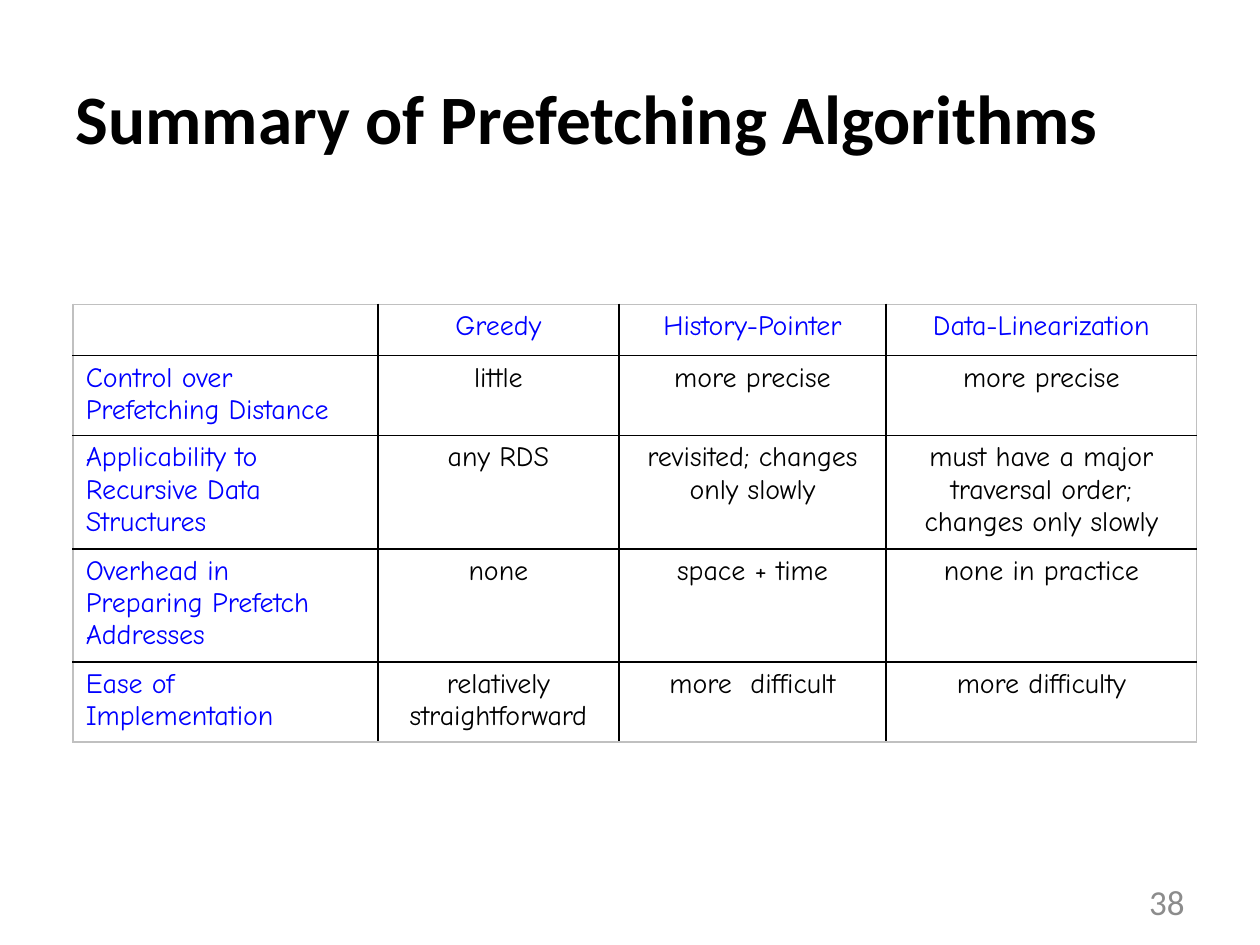
from lxml.etree import SubElement
from pptx import Presentation
from pptx.dml.color import RGBColor
from pptx.enum.text import MSO_ANCHOR as Anchor, PP_ALIGN as Align
from pptx.oxml.ns import qn
from pptx.util import Pt

HUES = {"black": "000000", "blue": "0000FF", "grey": "8C8C8C", "edge": "C0C0C0"}


def write(frame, text, font="Comic Neue", size=16, hue="black", bold=False,
          align=Align.LEFT, anchor=Anchor.TOP):
    frame.word_wrap = True
    frame.vertical_anchor = anchor
    frame.text = text
    for para in frame.paragraphs:
        para.alignment = align
        para.font.name = font
        para.font.size = Pt(size)
        para.font.bold = bold
        para.font.color.rgb = RGBColor.from_string(HUES[hue])


def rule(cell, side, hue):
    """Draw a 1 pt border on one side (L, R, T or B) of a cell."""
    line = SubElement(cell._tc.get_or_add_tcPr(), qn(f"a:ln{side}"), w=str(Pt(1)))
    fill = SubElement(line, qn("a:solidFill"))
    SubElement(fill, qn("a:srgbClr"), val=HUES[hue])


deck = Presentation()
deck.slide_width, deck.slide_height = Pt(720), Pt(540)
slide = deck.slides.add_slide(deck.slide_layouts[5])

title = slide.shapes.title
title.left, title.top, title.width, title.height = Pt(36), Pt(21.6), Pt(648), Pt(90)
write(title.text_frame, "Summary of Prefetching Algorithms", font="Calibri",
      size=39.6, bold=True, anchor=Anchor.MIDDLE)

number = slide.shapes.add_textbox(Pt(516), Pt(500.5), Pt(168), Pt(28.75))
write(number.text_frame, "38", font="Calibri", size=20, hue="grey",
      align=Align.RIGHT, anchor=Anchor.MIDDLE)

rows = [
    ["", "Greedy", "History-Pointer", "Data-Linearization"],
    ["Control over Prefetching Distance", "little", "more precise", "more precise"],
    ["Applicability to Recursive Data Structures", "any RDS",
     "revisited; changes only slowly",
     "must have a major traversal order; changes only slowly"],
    ["Overhead in\nPreparing Prefetch Addresses", "none", "space + time",
     "none in practice"],
    ["Ease of Implementation", "relatively straightforward", "more  difficult",
     "more difficulty"],
]
widths = [174.2, 137.6, 152.8, 177.4]
high = 29.2

table = slide.shapes.add_table(len(rows), len(widths), Pt(41.8), Pt(174),
                               Pt(sum(widths)), Pt(high * len(rows))).table
table.first_row = table.horz_banding = False
for col, width in zip(table.columns, widths):
    col.width = Pt(width)

for r, texts in enumerate(rows):
    table.rows[r].height = Pt(high)
    for c, text in enumerate(texts):
        cell = table.cell(r, c)
        write(cell.text_frame, text, hue="black" if r and c else "blue",
              align=Align.CENTER if c else Align.LEFT)
        outer = {"L": c == 0, "R": c == len(widths) - 1,
                 "T": r == 0, "B": r == len(rows) - 1}
        for side, edge in outer.items():
            rule(cell, side, "edge" if edge else "black")
        cell.fill.background()

deck.save("out.pptx")
